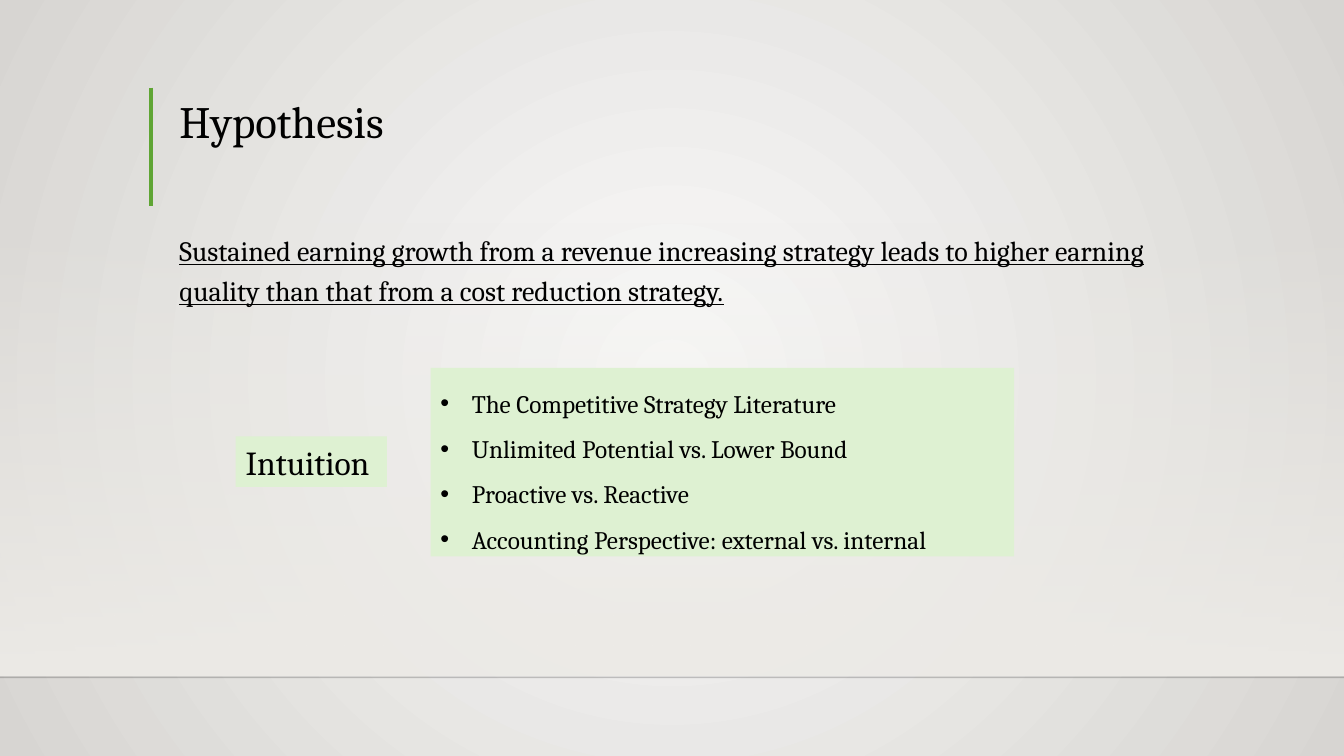
from lxml import etree
from pptx import Presentation
from pptx.dml.color import RGBColor
from pptx.enum.shapes import MSO_CONNECTOR, MSO_SHAPE
from pptx.enum.text import MSO_ANCHOR, MSO_AUTO_SIZE, PP_ALIGN
from pptx.oxml import parse_xml
from pptx.oxml.ns import nsdecls, qn
from pptx.util import Cm, Pt

RECT = MSO_SHAPE.RECTANGLE
LINE = MSO_CONNECTOR.STRAIGHT
TOP, BASE = MSO_ANCHOR.TOP, MSO_ANCHOR.BOTTOM
LEFT = PP_ALIGN.LEFT
GROW, FIXED = MSO_AUTO_SIZE.SHAPE_TO_FIT_TEXT, MSO_AUTO_SIZE.NONE

FONT = "Cambria"
WIDTH, HEIGHT = 33.87, 19.05
COLORS = {
    "text": "000000",
    "center": "FAFAF9",
    "edge": "D7D5D2",
    "floor": "EDEBE7",
    "rule": "000001",
    "accent": "5FA534",
    "panel": "DEF1D2",
}
POINTS = [
    "The Competitive Strategy Literature",
    "Unlimited Potential vs. Lower Bound",
    "Proactive vs. Reactive",
    "Accounting Perspective: external vs. internal",
]


def color(name):
    return RGBColor.from_string(COLORS[name])


def blend(owner, first, last, alpha, shade):
    """Swap the solid fill of an element for a two-stop gradient."""
    grad = parse_xml(
        f'<a:gradFill {nsdecls("a")} rotWithShape="1"><a:gsLst>'
        f'<a:gs pos="0"><a:srgbClr val="{COLORS[first]}">'
        f'<a:alpha val="{alpha * 1000}"/></a:srgbClr></a:gs>'
        f'<a:gs pos="100000"><a:srgbClr val="{COLORS[last]}"/></a:gs>'
        f'</a:gsLst>{shade}</a:gradFill>')
    owner.replace(owner.find(qn("a:solidFill")), grad)


def add_rect(slide, area, fill):
    rect = slide.shapes.add_shape(RECT, *map(Cm, area))
    rect.shadow.inherit = False
    rect.fill.solid()
    rect.fill.fore_color.rgb = color(fill)
    rect.line.fill.background()
    return rect


def add_line(slide, start, end, name, width, alpha=100):
    line = slide.shapes.add_connector(LINE, *map(Cm, start + end))
    line.line.color.rgb = color(name)
    line.line.width = Pt(width)
    props = line._element.spPr
    etree.SubElement(props, qn("a:effectLst"))
    if alpha < 100:
        tone = props.find(".//" + qn("a:srgbClr"))
        etree.SubElement(tone, qn("a:alpha"), val=str(alpha * 1000))


def add_bullet(para, indent):
    props = para._p.get_or_add_pPr()
    props.set("marL", str(Cm(indent)))
    props.set("indent", str(-Cm(indent)))
    etree.SubElement(props, qn("a:buFont"), typeface="Arial")
    etree.SubElement(props, qn("a:buChar"), char="•")


def write(shape, lines, size, space=1.0, anchor=TOP, fit=FIXED,
          bullet=False, under=None):
    frame = shape.text_frame
    frame.word_wrap = True
    frame.auto_size = fit
    frame.vertical_anchor = anchor
    frame.text = "\n".join(lines)
    for para in frame.paragraphs:
        para.alignment = LEFT
        para.line_spacing = space
        if bullet:
            add_bullet(para, 0.79)
        font = para.font
        font.name, font.size = FONT, Pt(size)
        font.color.rgb = color("text")
        font.underline = under


def add_text(slide, area, *args, **kwargs):
    write(slide.shapes.add_textbox(*map(Cm, area)), *args, **kwargs)


def add_panel(slide, area, *args, **kwargs):
    write(add_rect(slide, area, "panel"), *args, fit=GROW, **kwargs)


def add_scene(slide):
    # Radial background
    slide.background.fill.solid()
    props = slide.element.find(".//" + qn("p:bgPr"))
    blend(props, "center", "edge", 100,
          '<a:path path="circle"><a:fillToRect l="50000" t="50000" '
          'r="50000" b="50000"/></a:path>')
    # Fading floor and its edge
    floor = add_rect(slide, (0, 5.59, WIDTH, 11.43), "floor")
    blend(floor._element.spPr, "floor", "floor", 0,
          '<a:lin ang="5400000" scaled="0"/>')
    add_line(slide, (0, 17.07), (WIDTH, 17.07), "rule", 1, alpha=20)


def main():
    deck = Presentation()
    deck.slide_width, deck.slide_height = Cm(WIDTH), Cm(HEIGHT)
    slide = deck.slides.add_slide(deck.slide_layouts[6])
    add_scene(slide)

    # Title with accent bar
    add_line(slide, (3.81, 2.21), (3.81, 5.18), "accent", 3)
    add_text(slide, (4.27, 2.11, 26.44, 1.75), ["Hypothesis"], 32,
             space=0.9, anchor=BASE)

    # Statement
    add_text(slide, (4.27, 5.59, 26.44, 2.92),
             ["Sustained earning growth from a revenue increasing strategy "
              "leads to higher earning quality than that from a cost "
              "reduction strategy."], 20, space=1.2, under=True)

    # Intuition and its points
    add_panel(slide, (5.94, 11, 3.81, 1.27), ["Intuition"], 24)
    add_panel(slide, (10.85, 9.27, 14.71, 4.75), POINTS, 18,
              space=1.5, bullet=True)

    deck.save("out.pptx")


if __name__ == "__main__":
    main()
